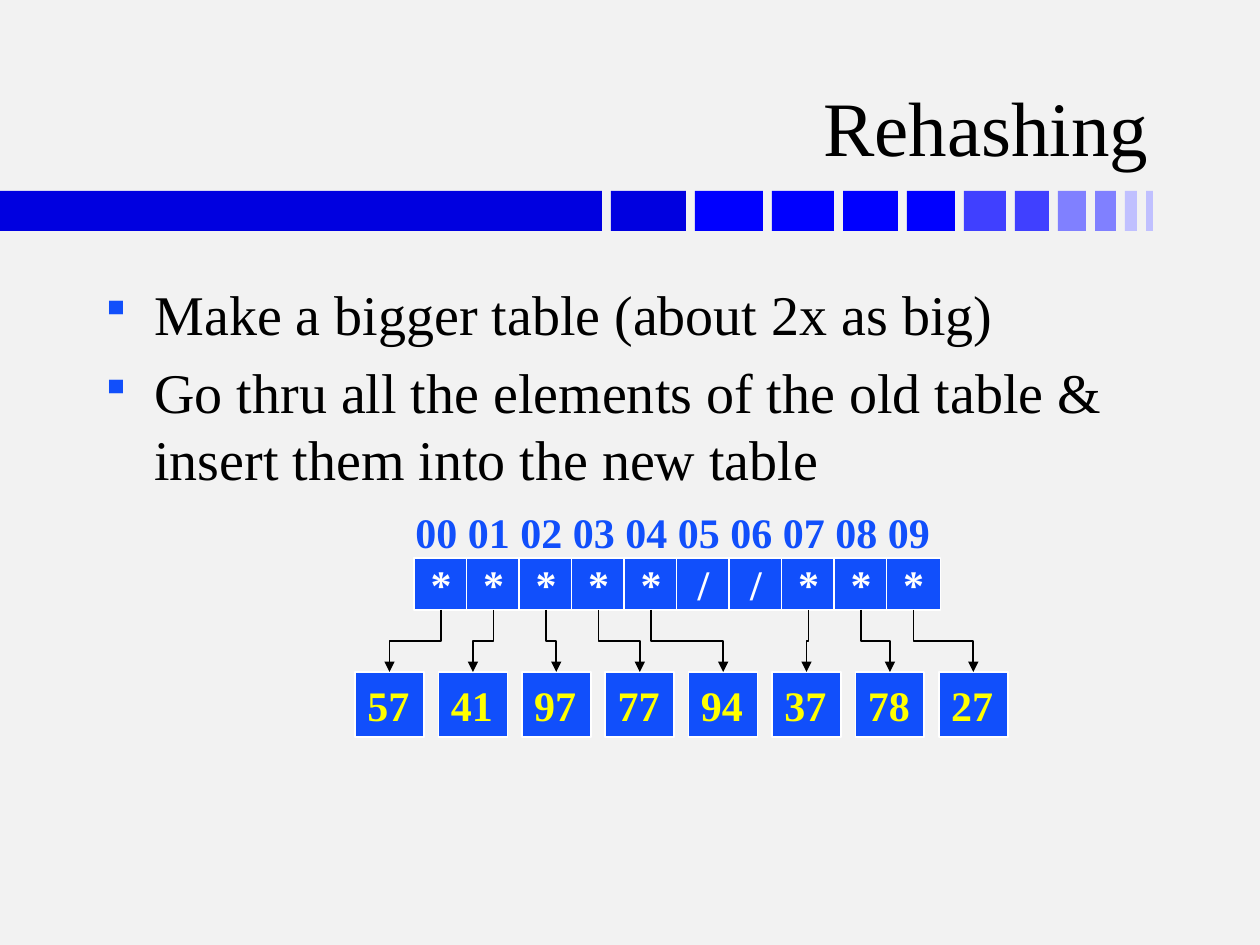
from lxml.etree import SubElement
from pptx import Presentation
from pptx.dml.color import RGBColor
from pptx.enum.shapes import MSO_CONNECTOR, MSO_SHAPE
from pptx.enum.text import MSO_ANCHOR, MSO_AUTO_SIZE, PP_ALIGN
from pptx.oxml.ns import qn
from pptx.util import Emu, Pt

SCALE = 914400 / 126
BLUE = "114FFB"


def px(length):
    return Emu(round(length * SCALE))


def color(target, value):
    """Colour a fill (made solid first) or a font."""
    if hasattr(target, "solid"):
        target.solid()
        target.fore_color.rgb = RGBColor.from_string(value)
    else:
        target.color.rgb = RGBColor.from_string(value)


presentation = Presentation()
presentation.slide_width = px(1260)
presentation.slide_height = px(945)
slide = presentation.slides.add_slide(presentation.slide_layouts[6])
color(slide.background.fill, "F2F2F2")

# Fading stripe: bars that shrink to the right, with equal gaps
bar_widths = [602, 75, 68, 62, 55, 48, 42, 34, 28, 21, 12, 7]
bar_colors = (["0000E0"] * 2 + ["0000FF"] * 4 + ["4040FF"] * 2
              + ["8080FF"] * 2 + ["C0C0FF"] * 2)
bar_left = 0
for width, fill in zip(bar_widths, bar_colors):
    bar = slide.shapes.add_shape(
        MSO_SHAPE.RECTANGLE, px(bar_left), px(191), px(width), px(40))
    bar.shadow.inherit = False
    color(bar.fill, fill)
    bar.line.fill.background()
    bar_left += width + 9

# Title, bullet list and index labels
texts = [
    ((93, 24, 1068, 154), ["Rehashing"], 44, "000000"),
    ((88, 273, 1078, 567), [
        "Make a bigger table (about 2x as big)",
        "Go thru all the elements of the old table & insert them into the new table",
    ], 32, "000000"),
    ((403, 500, 542, 63), ["00 01 02 03 04 05 06 07 08 09"], 24, BLUE),
]
frames = []
for box, lines, size, text_color in texts:
    frame = slide.shapes.add_textbox(*map(px, box)).text_frame
    frame.word_wrap = True
    frames.append(frame)
    for number, line in enumerate(lines):
        paragraph = frame.add_paragraph() if number else frame.paragraphs[0]
        run = paragraph.add_run()
        run.text = line
        run.font.name = "Times New Roman"
        run.font.size = Pt(size)
        color(run.font, text_color)

title, body, labels = frames
title.vertical_anchor = MSO_ANCHOR.BOTTOM
title.paragraphs[0].alignment = PP_ALIGN.RIGHT
labels.word_wrap = False
labels.auto_size = MSO_AUTO_SIZE.SHAPE_TO_FIT_TEXT
labels.paragraphs[0].runs[0].font.bold = True

for paragraph in body.paragraphs:
    properties = paragraph._p.get_or_add_pPr()
    properties.set("marL", str(px(54)))
    properties.set("indent", str(-px(54)))
    bullet_color = SubElement(properties, qn("a:buClr"))
    SubElement(bullet_color, qn("a:srgbClr"), val=BLUE)
    SubElement(properties, qn("a:buSzPct"), val="75000")
    SubElement(properties, qn("a:buChar"), char="▪")
body.paragraphs[1].space_before = Pt(6.4)

# Hash table cells above, stored values below
cells = "*****//***"
values = ["57", "41", "97", "77", "94", "37", "78", "27"]
rows = [
    (cells, 414, 52.5, 558, 54, 52, "FFFFFF", PP_ALIGN.CENTER),
    (values, 355, 83.4, 672, 69, 65, "FFFF00", PP_ALIGN.LEFT),
]
centers = []
for entries, left, step, top, width, height, text_color, alignment in rows:
    for number, entry in enumerate(entries):
        box = slide.shapes.add_shape(
            MSO_SHAPE.RECTANGLE, px(left + number * step), px(top), px(width), px(height))
        box.shadow.inherit = False
        color(box.fill, BLUE)
        color(box.line.fill, "FFFFFF")
        box.line.width = Pt(1)
        frame = box.text_frame
        frame.word_wrap = False
        frame.vertical_anchor = MSO_ANCHOR.MIDDLE
        paragraph = frame.paragraphs[0]
        paragraph.alignment = alignment
        run = paragraph.add_run()
        run.text = entry
        run.font.name = "Times New Roman"
        run.font.size = Pt(24)
        run.font.bold = True
        color(run.font, text_color)
    centers.append([left + number * step + width / 2 for number in range(len(entries))])

# Elbow arrows from each occupied cell to its value
cell_centers, value_centers = centers
starts = [center for cell, center in zip(cells, cell_centers) if cell == "*"]
arrow_top, arrow_bottom = 610, 672
half_drop = (arrow_bottom - arrow_top) / 2
middle_y = (arrow_top + arrow_bottom) / 2
for start, end in zip(starts, value_centers):
    middle_x = (start + end) / 2
    half_shift = abs(end - start) / 2
    arrow = slide.shapes.add_connector(
        MSO_CONNECTOR.ELBOW,
        px(middle_x - half_drop), px(middle_y - half_shift),
        px(middle_x + half_drop), px(middle_y + half_shift))
    color(arrow.line.fill, "000000")
    arrow.line.width = Pt(1)
    # A quarter turn makes the elbow leave its cell downwards
    properties = arrow._element.spPr
    transform = properties.find(qn("a:xfrm"))
    if end > start:
        transform.set("rot", "16200000")
        transform.set("flipH", "1")
    else:
        transform.set("rot", "5400000")
    SubElement(properties.find(qn("a:ln")), qn("a:tailEnd"), type="triangle")
    SubElement(properties, qn("a:effectLst"))

presentation.save("out.pptx")
